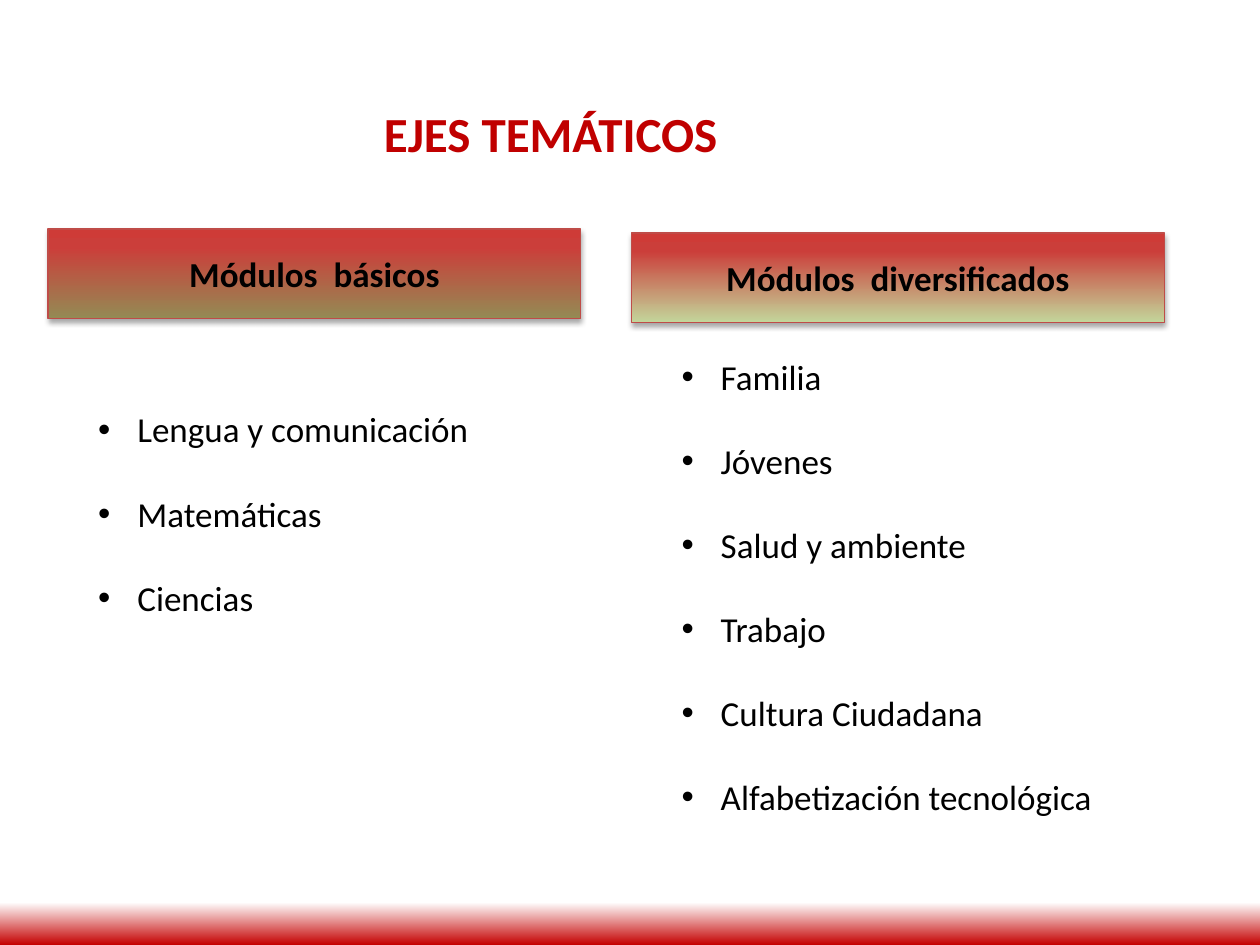
import copy
from dataclasses import dataclass

import lxml.etree
import pptx
import pptx.dml.color
import pptx.enum.shapes
import pptx.enum.text
import pptx.oxml
import pptx.oxml.ns
import pptx.util

Cm = pptx.util.Cm
Pt = pptx.util.Pt


@dataclass(frozen=True)
class Theme:
    """Colours, font and type sizes of the slide."""

    font: str = "Calibri"
    title_size: int = 28
    body_size: int = 20
    bullet_gap: int = 24
    title: str = "C00000"
    text: str = "000000"
    outline: str = "BF4C48"
    header_top: str = "CE3B37"
    header_middle: str = "CB3E3A"
    basic: str = "948A54"
    diversified: str = "C3D69B"
    band_top: str = "FFFFFF"
    band_bottom: str = "C40000"


THEME = Theme()


def rgb(value):
    """Return the colour for a hex string."""
    return pptx.dml.color.RGBColor.from_string(value)


def add_text(paragraph, text, size, color, bold=False):
    """Add one styled run to a paragraph."""
    run = paragraph.add_run()
    run.text = text
    run.font.name = THEME.font
    run.font.size = Pt(size)
    run.font.bold = bold
    run.font.color.rgb = rgb(color)


def fill_gradient(shape, stops):
    """Fill a shape from top to bottom with (position, colour) stops."""
    shape.fill.gradient()
    shape.fill.gradient_angle = 270
    stop_list = shape._element.spPr.find(".//" + pptx.oxml.ns.qn("a:gsLst"))
    while len(stop_list) < len(stops):
        stop_list.append(copy.deepcopy(stop_list[0]))
    for stop, (position, color) in zip(shape.fill.gradient_stops, stops):
        stop.position = position
        stop.color.rgb = rgb(color)


def add_shadow(shape):
    """Give a shape a soft shadow straight below it."""
    shape.shadow.inherit = False
    effects = shape._element.spPr.find(pptx.oxml.ns.qn("a:effectLst"))
    shadow = lxml.etree.SubElement(
        effects, pptx.oxml.ns.qn("a:outerShdw"), blurRad=str(Pt(3.1)),
        dist=str(Pt(1.8)), dir="5400000", rotWithShape="0")
    color = lxml.etree.SubElement(shadow, pptx.oxml.ns.qn("a:srgbClr"), val="000000")
    lxml.etree.SubElement(color, pptx.oxml.ns.qn("a:alpha"), val="35000")


def set_bullet(paragraph, indent):
    """Give a paragraph a hanging round bullet."""
    properties = paragraph._p.get_or_add_pPr()
    properties.set("marL", str(indent))
    properties.set("indent", str(-indent))
    lxml.etree.SubElement(properties, pptx.oxml.ns.qn("a:buFont"), typeface="Arial")
    lxml.etree.SubElement(properties, pptx.oxml.ns.qn("a:buChar"), char="•")


def add_title(slide, left, top, width, height, text):
    """Place the slide title."""
    frame = slide.shapes.add_textbox(left, top, width, height).text_frame
    frame.word_wrap = False
    add_text(frame.paragraphs[0], text, THEME.title_size, THEME.title, bold=True)


def add_header(slide, left, top, width, height, text, bottom_color):
    """Place the heading bar of a module column."""
    header = slide.shapes.add_shape(
        pptx.enum.shapes.MSO_SHAPE.RECTANGLE, left, top, width, height)
    fill_gradient(header, [(0, THEME.header_top), (0.2, THEME.header_middle),
                           (1, bottom_color)])
    header.line.color.rgb = rgb(THEME.outline)
    header.line.width = Pt(0.75)
    add_shadow(header)
    frame = header.text_frame
    frame.word_wrap = False
    frame.vertical_anchor = pptx.enum.text.MSO_ANCHOR.MIDDLE
    paragraph = frame.paragraphs[0]
    paragraph.alignment = pptx.enum.text.PP_ALIGN.CENTER
    add_text(paragraph, text, THEME.body_size, THEME.text, bold=True)


def add_bullets(slide, left, top, width, height, items):
    """Place an evenly spaced bullet list."""
    frame = slide.shapes.add_textbox(left, top, width, height).text_frame
    frame.word_wrap = True
    for index, item in enumerate(items):
        paragraph = frame.add_paragraph() if index else frame.paragraphs[0]
        if index:
            paragraph.space_before = Pt(THEME.bullet_gap)
        set_bullet(paragraph, Cm(0.79))
        add_text(paragraph, item, THEME.body_size, THEME.text)


def add_column(slide, left, top, width, height, heading, color, list_offset, items):
    """Place a module column: heading bar above its bullet list."""
    add_header(slide, left, top, width, Cm(1.8), heading, color)
    add_bullets(slide, left + Cm(0.76), top + list_offset, width - Cm(1.55),
                height - list_offset, items)


def add_band(slide, left, top, width, height):
    """Place the fading band along the foot of the slide."""
    band = slide.shapes.add_shape(
        pptx.enum.shapes.MSO_SHAPE.RECTANGLE, left, top, width, height)
    fill_gradient(band, [(0, THEME.band_top), (1, THEME.band_bottom)])
    band.line.fill.background()
    band.shadow.inherit = False


def main():
    """Build and save the slide."""
    presentation = pptx.Presentation()
    presentation.slide_width = Cm(25.4)
    presentation.slide_height = Cm(19.05)
    slide = presentation.slides.add_slide(presentation.slide_layouts[6])
    add_title(slide, Cm(7.49), Cm(1.96), Cm(7.32), Cm(1.45), "EJES TEMÁTICOS")
    add_band(slide, Cm(0), Cm(18.19), Cm(25.4), Cm(0.86))
    add_column(slide, Cm(0.97), Cm(4.62), Cm(10.74), Cm(8.86),
               "Módulos  básicos", THEME.basic, Cm(3.48),
               ["Lengua y comunicación", "Matemáticas", "Ciencias"])
    add_column(slide, Cm(12.73), Cm(4.7), Cm(10.74), Cm(12.86),
               "Módulos  diversificados", THEME.diversified, Cm(2.34),
               ["Familia", "Jóvenes", "Salud y ambiente", "Trabajo",
                "Cultura Ciudadana", "Alfabetización tecnológica"])
    presentation.save("out.pptx")


if __name__ == "__main__":
    main()
